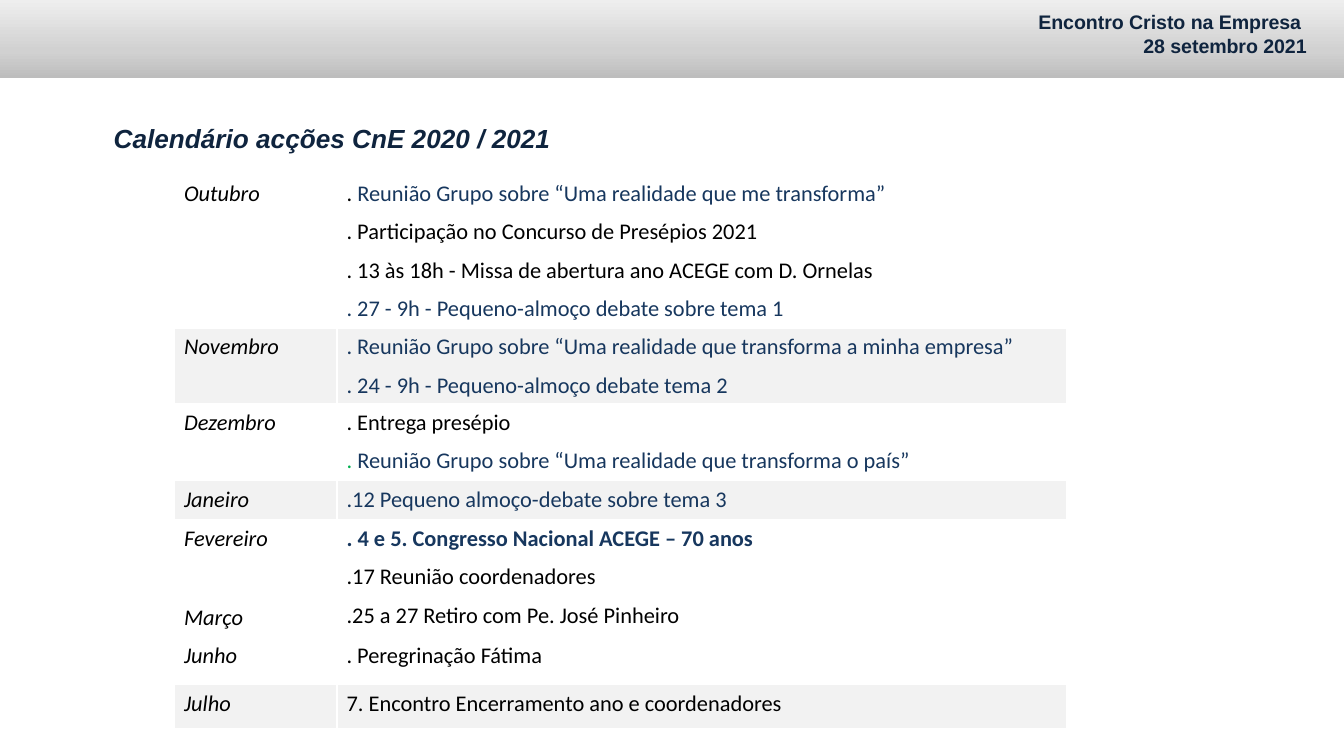
from collections import namedtuple
from copy import deepcopy

from lxml.etree import SubElement
from pptx import Presentation
from pptx.dml.color import RGBColor
from pptx.enum.shapes import MSO_SHAPE
from pptx.enum.text import MSO_ANCHOR, PP_ALIGN
from pptx.oxml.ns import qn
from pptx.util import Cm, Pt

Box = namedtuple("Box", "left top width height")

COLOURS = {
    "white": "FFFFFF", "black": "000000", "title": "0F243E", "blue": "17375E",
    "green": "00B050", "band": "F2F2F2",
    "bar_dark": "BDBDBD", "bar_middle": "D1D1D1", "bar_light": "EEEEEE",
}

MONTHS = [
    (["Outubro"], 2.9, [
        [(". ", "black"), ("Reunião Grupo sobre “Uma realidade que me transforma”", "blue")],
        [(". Participação no Concurso de Presépios 2021", "black")],
        [(". 13 às 18h - Missa de abertura ano ACEGE com D. Ornelas", "black")],
        [(". 27 - 9h - Pequeno-almoço debate sobre tema 1", "blue")]]),
    (["Novembro"], 1.42, [
        [(". Reunião Grupo sobre “Uma realidade que transforma a minha empresa”", "blue")],
        [(". 24 - 9h - Pequeno-almoço debate tema 2", "blue")]]),
    (["Dezembro"], 1.45, [
        [(". Entrega presépio", "black")],
        [(". ", "green"), ("Reunião Grupo sobre “Uma realidade que transforma o país”", "blue")]]),
    (["Janeiro"], 0.74, [[(".12 Pequeno almoço-debate sobre tema 3", "blue")]]),
    (["Fevereiro", "Março"], 2.21, [
        [(". 4 e 5. Congresso Nacional ACEGE – 70 anos", "blue", True)],
        [(".17 Reunião coordenadores", "black")],
        [(".25 a 27 Retiro com Pe. José Pinheiro", "black")]]),
    (["Junho"], 0.9, [[(". Peregrinação Fátima", "black")]]),
    (["Julho"], 0.83, [[("7. Encontro Encerramento ano e coordenadores", "black")]]),
]
BANDED = {"Novembro", "Janeiro", "Julho"}


def colour(name):
    return RGBColor.from_string(COLOURS[name])


def add_span(para, text, size=12, font="Calibri", shade="black", bold=False, italic=False):
    span = para.add_run()
    span.text = text
    span.font.size = Pt(size)
    span.font.name = font
    span.font.bold = bold
    span.font.italic = italic
    span.font.color.rgb = colour(shade)


def paragraphs(frame, count):
    yield frame.paragraphs[0]
    for _ in range(count - 1):
        yield frame.add_paragraph()


def add_text_box(page, box):
    frame = page.shapes.add_textbox(*map(Cm, box)).text_frame
    frame.word_wrap = True
    return frame


def add_header(page, box):
    bar = page.shapes.add_shape(MSO_SHAPE.RECTANGLE, *map(Cm, box))
    bar.shadow.inherit = False
    bar.line.fill.background()
    bar.fill.gradient()
    bar.fill.gradient_angle = 90
    first_stop = bar._element.spPr.find(".//" + qn("a:gs"))
    first_stop.addnext(deepcopy(first_stop))
    shades = [("bar_dark", 0), ("bar_middle", 0.35), ("bar_light", 1)]
    for stop, (name, position) in zip(bar.fill.gradient_stops, shades):
        stop.color.rgb = colour(name)
        stop.position = position

    half = box.width / 2
    frame = add_text_box(page, Box(box.left + half, box.top, half - 0.45, box.height - 0.28))
    frame.vertical_anchor = MSO_ANCHOR.BOTTOM
    lines = ["Encontro Cristo na Empresa ", "28 setembro 2021"]
    for index, para in enumerate(paragraphs(frame, len(lines))):
        para.alignment = PP_ALIGN.RIGHT
        para.line_spacing = 0.8
        if index:
            para.space_before = Pt(2.5)
        add_span(para, lines[index], size=10.5, font="Arial", shade="title", bold=True)


def add_title(page, box):
    frame = add_text_box(page, box)
    add_span(frame.paragraphs[0], "Calendário acções CnE 2020 / 2021",
             size=14, font="Arial", shade="title", bold=True, italic=True)


def style_cell(cell, filled, thick_bottom):
    cell.margin_left = cell.margin_right = Cm(0.18)
    cell.margin_top = cell.margin_bottom = Cm(0.1)
    properties = cell._tc.get_or_add_tcPr()
    for side in "LRTB":
        points = 3 if thick_bottom and side == "B" else 1
        border = SubElement(properties, qn("a:ln" + side), w=str(Pt(points)))
        fill = SubElement(border, qn("a:solidFill"))
        SubElement(fill, qn("a:srgbClr"), val=COLOURS["white"])
    if filled:
        cell.fill.solid()
        cell.fill.fore_color.rgb = colour("band")
    else:
        cell.fill.background()


def add_calendar(page, box):
    table = page.shapes.add_table(len(MONTHS) + 1, 3, *map(Cm, box)).table
    table.first_row = False
    table.horz_banding = False
    side_widths = (3.07, 2.54)
    widths = (side_widths[0], box.width - sum(side_widths), side_widths[1])
    for column, width in zip(table.columns, widths):
        column.width = Cm(width)
    heights = [month[1] for month in MONTHS]
    for row, height in zip(table.rows, [box.height - sum(heights)] + heights):
        row.height = Cm(height)

    for row_index, row in enumerate(table.rows):
        names, _, events = MONTHS[row_index - 1] if row_index else ([], 0, [])
        for column_index, cell in enumerate(row.cells):
            filled = column_index < 2 and not BANDED.isdisjoint(names)
            style_cell(cell, filled, row_index == 0)
            if row_index == 0 or column_index == 2:
                SubElement(cell.text_frame.paragraphs[0]._p, qn("a:endParaRPr"), sz="1000")
        if not names:
            continue
        month_cell, event_cell, _ = row.cells
        for index, para in enumerate(paragraphs(month_cell.text_frame, len(names))):
            if index:
                para.space_before = Pt(27.5)
            add_span(para, names[index], italic=True)
        for para, event in zip(paragraphs(event_cell.text_frame, len(events)), events):
            para.space_after = Pt(6)
            for text, shade, *bold in event:
                add_span(para, text, shade=shade, bold=bool(bold))


def main():
    deck = Presentation()
    deck.slide_width = Cm(25.4)
    deck.slide_height = Cm(14.28)
    page = deck.slides.add_slide(deck.slide_layouts[6])
    add_header(page, Box(0, 0, 25.4, 1.48))
    add_calendar(page, Box(3.3, 2.54, 19.4, 11.21))
    add_title(page, Box(1.9, 2.18, 16, 1))
    deck.save("out.pptx")


if __name__ == "__main__":
    main()
